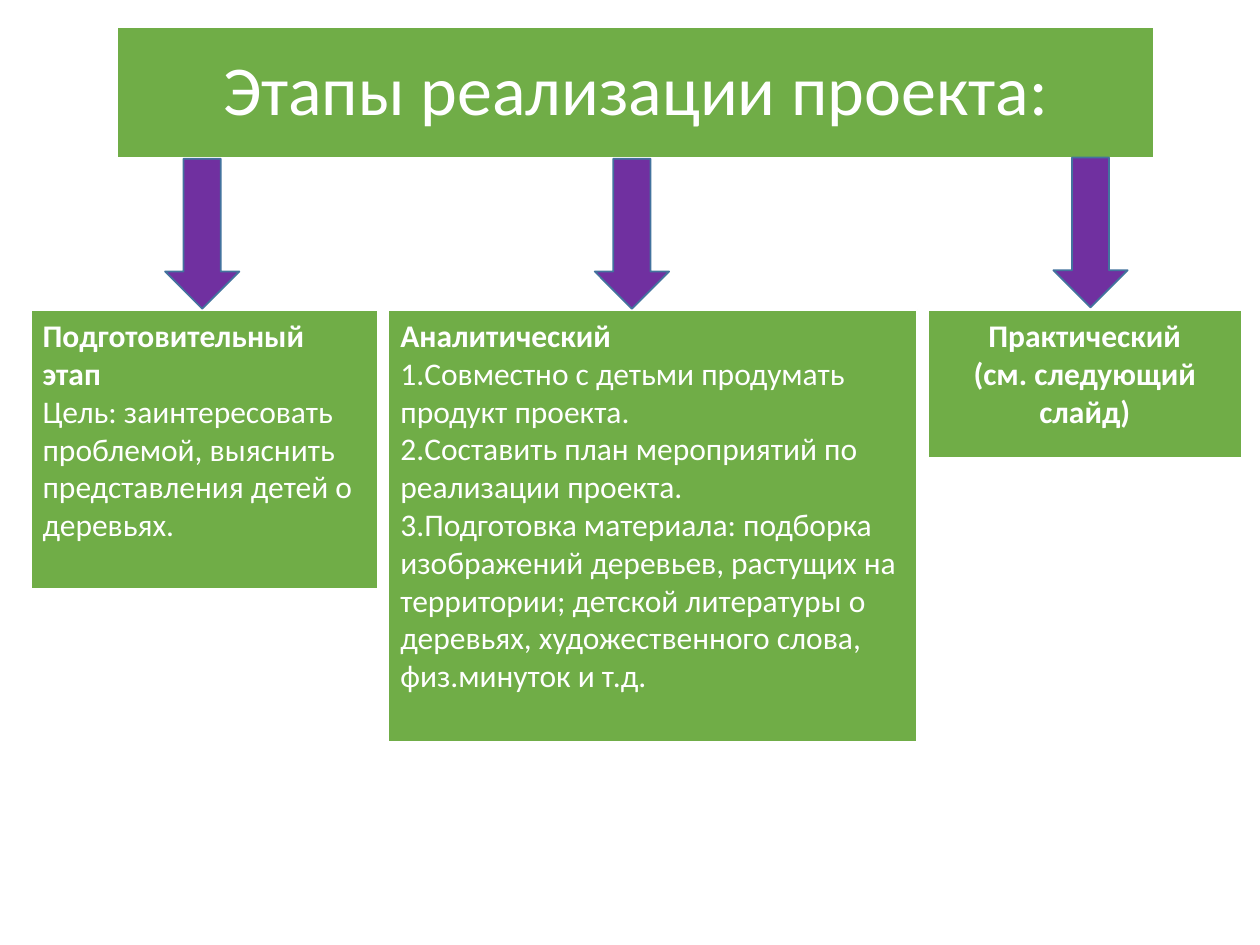
from dataclasses import dataclass

from pptx import Presentation
from pptx import util as u
from pptx.dml.color import RGBColor
from pptx.enum import shapes, text


@dataclass(frozen=True)
class Theme:
    font: str = "Calibri"
    title_size: int = 40
    body_size: int = 18
    ink: str = "FFFFFF"
    panel: str = "70AD47"
    arrow: str = "7030A0"
    arrow_edge: str = "43739E"


@dataclass(frozen=True)
class Box:
    """Place on the grid, in columns and rows."""
    left: float
    top: float
    width: float
    height: float


@dataclass(frozen=True)
class Stage:
    width: float
    height: float
    arrow_left: float
    arrow_top: float
    heading: str
    details: tuple[str, ...]
    bold_details: bool = False
    align: text.PP_ALIGN = text.PP_ALIGN.LEFT


THEME = Theme()
CELL = u.Inches(0.1)  # 100 columns by 75 rows
COLUMNS, ROWS = 100, 75

TITLE = Box(9.3, 2.1, 82.3, 10.5)
STAGES_LEFT, STAGES_TOP, STAGE_GAP = 2.4, 24.6, 0.8
ARROW_WIDTH, ARROW_HEIGHT = 5.9, 11.9

STAGES = (
    Stage(27.6, 22.2, 13.1, 12.6, "Подготовительный этап",
          ("Цель: заинтересовать проблемой, выяснить представления детей о деревьях.",)),
    Stage(42, 34.3, 47.2, 12.6, "Аналитический",
          ("1.Совместно с детьми продумать продукт проекта.",
           "2.Составить план мероприятий по реализации проекта.",
           "3.Подготовка материала: подборка изображений деревьев, растущих на "
           "территории; детской литературы о деревьях, художественного слова, "
           "физ.минуток и т.д.")),
    Stage(25, 11.8, 83.6, 12.5, "Практический", ("(см. следующий слайд)",),
          bold_details=True, align=text.PP_ALIGN.CENTER),
)


def draw_shape(slide, kind: shapes.MSO_SHAPE, box: Box, fill: str, edge: str,
               edge_width: float):
    places = (box.left, box.top, box.width, box.height)
    shape = slide.shapes.add_shape(kind, *(round(place * CELL) for place in places))
    shape.shadow.inherit = False
    shape.fill.solid()
    shape.fill.fore_color.rgb = RGBColor.from_string(fill)
    shape.line.color.rgb = RGBColor.from_string(edge)
    shape.line.width = u.Pt(edge_width)
    return shape


def write(paragraph, words: str, *, size: int, bold: bool = False,
          align: text.PP_ALIGN = text.PP_ALIGN.LEFT,
          line_spacing: float | None = None) -> None:
    paragraph.alignment = align
    paragraph.line_spacing = line_spacing
    run = paragraph.add_run()
    run.text = words
    run.font.name = THEME.font
    run.font.size = u.Pt(size)
    run.font.bold = bold
    run.font.color.rgb = RGBColor.from_string(THEME.ink)


def draw_panel(slide, box: Box, anchor: text.MSO_ANCHOR):
    panel = draw_shape(slide, shapes.MSO_SHAPE.RECTANGLE, box,
                       THEME.panel, THEME.ink, 1.5)
    frame = panel.text_frame
    frame.word_wrap = True
    frame.vertical_anchor = anchor
    return frame


def draw_stage(slide, stage: Stage, left: float) -> None:
    frame = draw_panel(slide, Box(left, STAGES_TOP, stage.width, stage.height),
                       text.MSO_ANCHOR.TOP)
    write(frame.paragraphs[0], stage.heading, size=THEME.body_size, bold=True,
          align=stage.align)
    for detail in stage.details:
        write(frame.add_paragraph(), detail, size=THEME.body_size,
              bold=stage.bold_details, align=stage.align)
    arrow = Box(stage.arrow_left, stage.arrow_top, ARROW_WIDTH, ARROW_HEIGHT)
    draw_shape(slide, shapes.MSO_SHAPE.DOWN_ARROW, arrow,
               THEME.arrow, THEME.arrow_edge, 1)


def main() -> None:
    deck = Presentation()
    deck.slide_width, deck.slide_height = COLUMNS * CELL, ROWS * CELL
    slide = deck.slides.add_slide(deck.slide_layouts[6])

    # Title banner
    title = draw_panel(slide, TITLE, text.MSO_ANCHOR.MIDDLE)
    write(title.paragraphs[0], "Этапы реализации проекта:", size=THEME.title_size,
          align=text.PP_ALIGN.CENTER, line_spacing=0.9)

    # Stages side by side, each with its arrow from the banner
    left = STAGES_LEFT
    for stage in STAGES:
        draw_stage(slide, stage, left)
        left += stage.width + STAGE_GAP

    deck.save("out.pptx")


if __name__ == "__main__":
    main()
